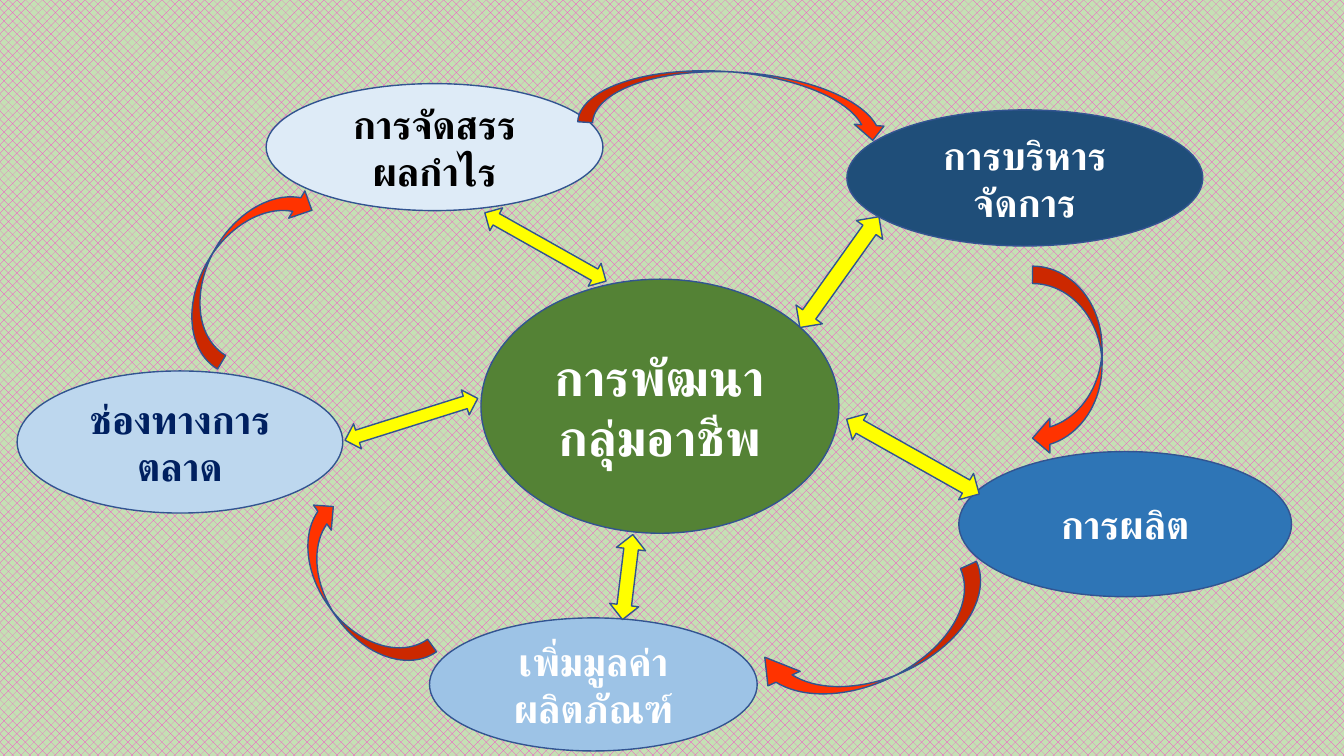
from typing import NamedTuple

from lxml.etree import SubElement
from pptx import Presentation
from pptx.dml.color import RGBColor
from pptx.enum.dml import MSO_PATTERN
from pptx.enum.lang import MSO_LANGUAGE_ID
from pptx.enum.shapes import MSO_SHAPE
from pptx.enum.text import MSO_ANCHOR, PP_ALIGN
from pptx.oxml.ns import qn
from pptx.util import Inches, Pt

FONT = "Lato"
OUTLINE = "325491"
RED = "FF3300"
YELLOW = "FFFF00"


class Frame(NamedTuple):
    left: float
    top: float
    width: float
    height: float


class Topic(NamedTuple):
    text: str
    frame: Frame
    fill: str
    color: str = "FFFFFF"
    size: int = 28


class Arrow(NamedTuple):
    frame: Frame
    rotation: float = 0
    head_length: float = 0.25


TOPICS = [
    Topic("การพัฒนากลุ่มอาชีพ", Frame(4.77, 2.77, 3.55, 2.52), "548235", size=36),
    Topic("การบริหารจัดการ", Frame(8.4, 1.09, 3.53, 1.35), "1F4E79"),
    Topic("การผลิต", Frame(9.51, 4.48, 3.3, 1.44), "2E75B6"),
    Topic("เพิ่มมูลค่าผลิตภัณฑ์", Frame(4.26, 6.13, 3.25, 1.32), "9DC3E6"),
    Topic("ช่องทางการตลาด", Frame(0.17, 3.68, 3.23, 1.41), "BDD7EE", "002060"),
    Topic("การจัดสรร ผลกำไร", Frame(2.64, 0.83, 3.34, 1.26), "DEEBF7", "000000"),
]

CYCLE_ARROWS = [
    Arrow(Frame(10.24, 2.64, 0.69, 1.88)),
    Arrow(Frame(8.35, 5.16, 0.7, 2.48), 65.6, 0.387),
    Arrow(Frame(3.22, 4.9, 0.61, 1.92), 144.6),
    Arrow(Frame(2.08, 1.65, 0.63, 1.99), 210.7),
    Arrow(Frame(6.99, -0.53, 0.59, 3.08), 273.6),
]

CENTRE_ARROWS = [
    Arrow(Frame(7.65, 2.54, 1.35, 0.32), 305.5),
    Arrow(Frame(8.3, 4.38, 1.51, 0.3), 209.4),
    Arrow(Frame(4.72, 2.32, 1.38, 0.26), 209.4),
    Arrow(Frame(5.8, 5.58, 0.85, 0.29), 96.9),
    Arrow(Frame(3.39, 4.03, 1.38, 0.26), 162.5),
]


def rgb(value: str) -> RGBColor:
    return RGBColor.from_string(value)


def paint_background(page) -> None:
    fill = page.background.fill
    fill.patterned()
    fill.pattern = MSO_PATTERN.from_xml("pct40")
    fill.fore_color.rgb = rgb("FF33CC")
    fill.back_color.rgb = rgb("C5E0B4")


def add_filled_shape(page, kind: MSO_SHAPE, frame: Frame, color: str):
    shape = page.shapes.add_shape(kind, *map(Inches, frame))
    shape.shadow.inherit = False
    shape.fill.solid()
    shape.fill.fore_color.rgb = rgb(color)
    shape.line.color.rgb = rgb(OUTLINE)
    shape.line.width = Pt(1)
    return shape


def add_topic(page, topic: Topic) -> None:
    oval = add_filled_shape(page, MSO_SHAPE.OVAL, topic.frame, topic.fill)
    box = oval.text_frame
    box.word_wrap = True
    box.vertical_anchor = MSO_ANCHOR.MIDDLE
    para = box.paragraphs[0]
    para.alignment = PP_ALIGN.CENTER
    span = para.add_run()
    span.text = topic.text
    text_format = {
        "name": FONT,
        "size": Pt(topic.size),
        "bold": True,
        "language_id": MSO_LANGUAGE_ID.THAI,
    }
    for name, value in text_format.items():
        setattr(span.font, name, value)
    span.font.color.rgb = rgb(topic.color)
    # Thai takes its typeface from the complex-script font
    SubElement(span._r.get_or_add_rPr(), qn("a:cs"), typeface=FONT)


def add_cycle_arrow(page, arrow: Arrow) -> None:
    shape = add_filled_shape(page, MSO_SHAPE.CURVED_LEFT_ARROW, arrow.frame, RED)
    shape.rotation = arrow.rotation
    shape.adjustments[2] = arrow.head_length


def add_centre_arrow(page, arrow: Arrow) -> None:
    shape = add_filled_shape(page, MSO_SHAPE.LEFT_RIGHT_ARROW, arrow.frame, YELLOW)
    shape.rotation = arrow.rotation


def main() -> None:
    deck = Presentation()
    deck.slide_width = Inches(13.33)
    deck.slide_height = Inches(7.5)
    page = deck.slides.add_slide(deck.slide_layouts[6])
    paint_background(page)
    for topic in TOPICS:
        add_topic(page, topic)
    for arrow in CYCLE_ARROWS:
        add_cycle_arrow(page, arrow)
    for arrow in CENTRE_ARROWS:
        add_centre_arrow(page, arrow)
    deck.save("out.pptx")


if __name__ == "__main__":
    main()
